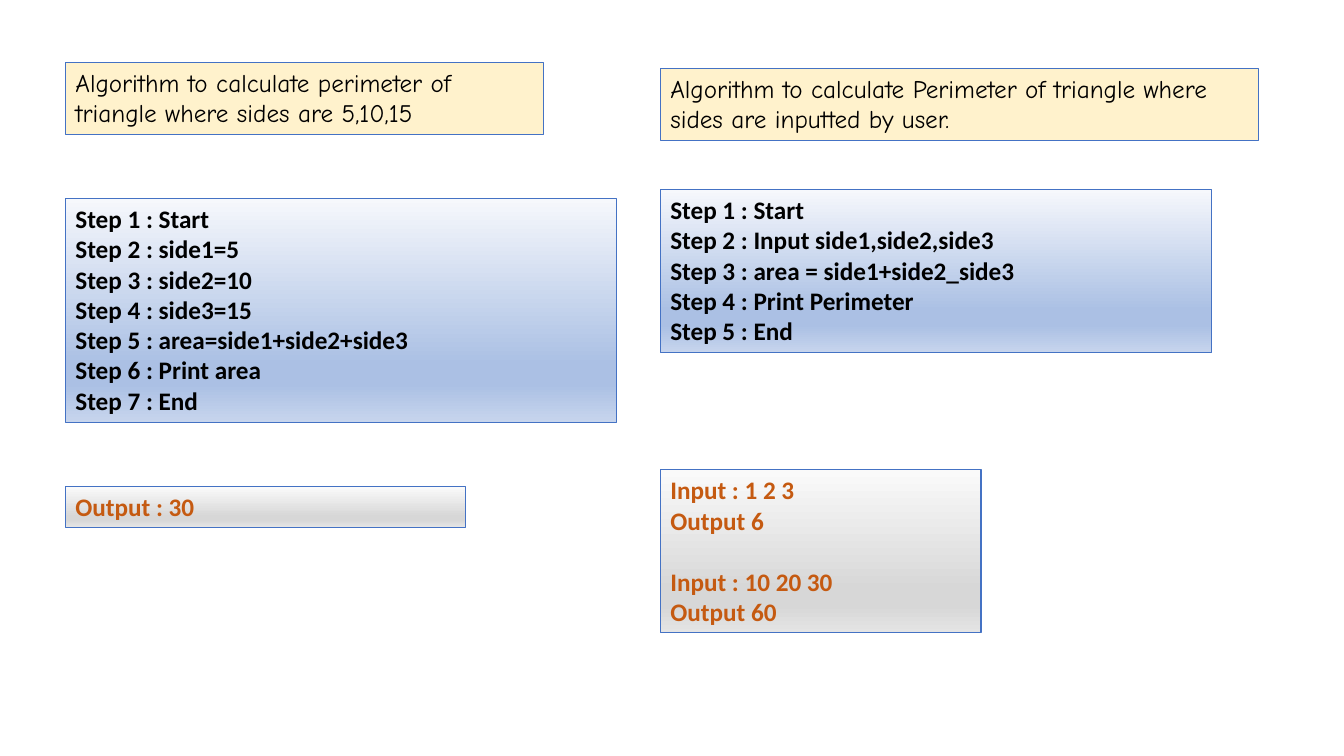
from lxml import etree
from pptx import Presentation
from pptx import util as u
from pptx.dml.color import RGBColor
from pptx.enum import text as t
from pptx.oxml import ns

COLORS = {
    "heading": "FFF2CC",
    "border": "4472C4",
    "ink": "000000",
    "result": "C55A11",
}
GRADIENTS = {
    "steps": ("F6F8FC", "ABC0E4", "ABC0E4", "C7D5ED"),
    "result": ("FAFAFA", "D7D7D7", "D7D7D7", "E4E4E4"),
}
STOPS = (0, 74, 83, 100)
LEFT_COLUMN, RIGHT_COLUMN = 0.65, 6.55
LINE_HEIGHT = 22


def rgb(name):
    return RGBColor.from_string(COLORS[name])


def fill_gradient(box, name):
    box.fill.gradient()
    box.fill.gradient_angle = 270
    stops = box._element.spPr.find(".//" + ns.qn("a:gsLst"))
    for stop in list(stops):
        stops.remove(stop)
    for percent, color in zip(STOPS, GRADIENTS[name]):
        stop = etree.SubElement(stops, ns.qn("a:gs"), pos=str(percent * 1000))
        etree.SubElement(stop, ns.qn("a:srgbClr"), val=color)


def add_box(page, left, top, width, height):
    box = page.shapes.add_textbox(*map(u.Inches, (left, top, width, height)))
    box.line.color.rgb = rgb("border")
    box.line.width = u.Pt(0.75)
    box.text_frame.word_wrap = True
    box.text_frame.auto_size = t.MSO_AUTO_SIZE.SHAPE_TO_FIT_TEXT
    return box


def write(para, text, font="Calibri", color="ink", bold=True, before=0):
    para.space_before = u.Pt(before)
    span = para.add_run()
    span.text = text
    span.font.name = font
    span.font.size = u.Pt(18)
    span.font.bold = bold
    span.font.color.rgb = rgb(color)


def write_lines(box, lines, **style):
    frame = box.text_frame
    for index, line in enumerate(lines):
        para = frame.add_paragraph() if index else frame.paragraphs[0]
        write(para, line, **style)


def add_heading(page, left, top, width, text):
    box = add_box(page, left, top, width, 0.71)
    box.fill.solid()
    box.fill.fore_color.rgb = rgb("heading")
    write_lines(box, [text], font="Comic Neue", bold=False)


def add_steps(page, left, top, height, actions):
    box = add_box(page, left, top, 5.47, height)
    fill_gradient(box, "steps")
    write_lines(box, [f"Step {number} : {action}" for number, action in enumerate(actions, 1)])


def add_results(page, left, top, width, height, lines):
    box = add_box(page, left, top, width, height)
    fill_gradient(box, "result")
    write_lines(box, lines, color="result")
    return box


def main():
    deck = Presentation()
    deck.slide_width, deck.slide_height = u.Inches(13.33), u.Inches(7.5)
    page = deck.slides.add_slide(deck.slide_layouts[6])

    add_heading(page, LEFT_COLUMN, 0.62, 4.74,
                "Algorithm to calculate perimeter of triangle where sides are 5,10,15")
    add_steps(page, LEFT_COLUMN, 1.97, 2.22,
              ["Start", "side1=5", "side2=10", "side3=15",
               "area=side1+side2+side3", "Print area", "End"])
    add_heading(page, RIGHT_COLUMN, 0.68, 5.93,
                "Algorithm to calculate Perimeter of triangle where sides are inputted by user.")
    add_steps(page, RIGHT_COLUMN, 1.88, 1.62,
              ["Start", "Input side1,side2,side3", "area = side1+side2_side3",
               "Print Perimeter", "End"])
    add_results(page, LEFT_COLUMN, 4.83, 3.97, 0.4, ["Output : 30"])
    runs = add_results(page, RIGHT_COLUMN, 4.66, 3.18, 1.62,
                       ["Input : 1 2 3", "Output 6", "Input : 10 20 30", "Output 60"])
    runs.text_frame.paragraphs[2].space_before = u.Pt(LINE_HEIGHT)

    deck.save("out.pptx")


if __name__ == "__main__":
    main()
